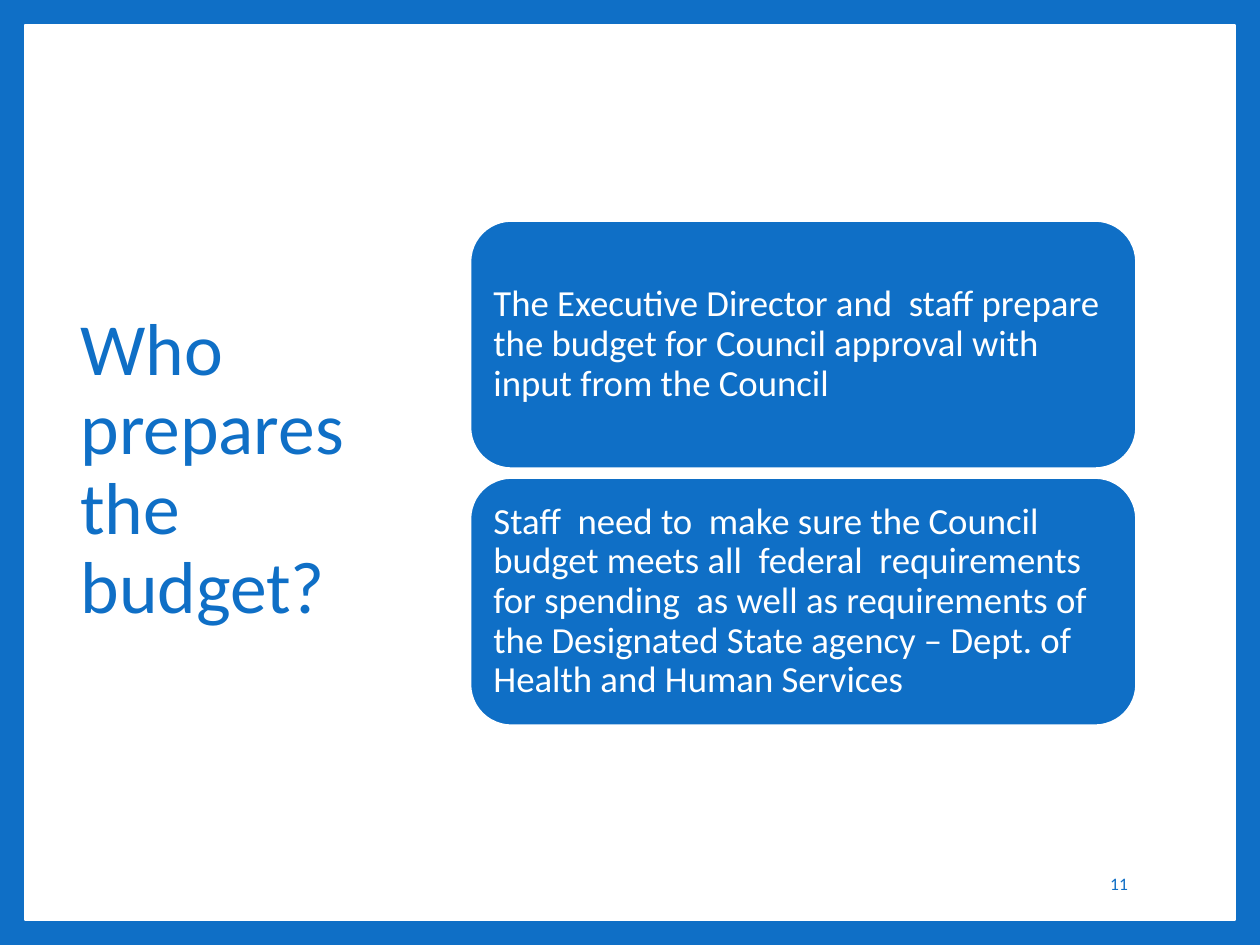
from pptx import Presentation
from pptx.dml.color import RGBColor
from pptx.enum.shapes import MSO_SHAPE as Shape
from pptx.enum.text import MSO_ANCHOR as Anchor, PP_ALIGN as Align
from pptx.util import Inches, Pt

COLORS = {"blue": "0F6FC6", "white": "FFFFFF"}
FONT = "Calibri"

CARD_LEFT, CARD_TOP = 3.73, 1.75
CARD_WIDTH, CARD_HEIGHT = 5.29, 1.97
CARD_PITCH = 2.04
CARD_INSET = 0.09

ANSWERS = [
    "The Executive Director and  staff prepare the budget for Council approval "
    "with input from the Council",
    "Staff  need to  make sure the Council budget meets all  federal  requirements "
    "for spending  as well as requirements of the Designated State agency – "
    "Dept. of Health and Human Services",
]


def color(name):
    return RGBColor.from_string(COLORS[name])


def write(shape, text, size, color_name, align=Align.LEFT, line_spacing=None):
    """Fill a shape with one vertically centred paragraph."""
    frame = shape.text_frame
    frame.word_wrap = True
    frame.vertical_anchor = Anchor.MIDDLE
    paragraph = frame.paragraphs[0]
    paragraph.text = text
    paragraph.alignment = align
    paragraph.line_spacing = line_spacing
    paragraph.font.name = FONT
    paragraph.font.size = Pt(size)
    paragraph.font.color.rgb = color(color_name)


def add_label(slide, box, text, size, **style):
    label = slide.shapes.add_textbox(*map(Inches, box))
    write(label, text, size, "blue", **style)


def add_panel(slide, preset, box, fill, line_width):
    panel = slide.shapes.add_shape(preset, *map(Inches, box))
    panel.shadow.inherit = False
    panel.fill.solid()
    panel.fill.fore_color.rgb = color(fill)
    panel.line.color.rgb = color("white")
    panel.line.width = Pt(line_width)
    return panel


def add_answer_card(slide, index, answer):
    top = CARD_TOP + index * CARD_PITCH
    card = add_panel(slide, Shape.ROUNDED_RECTANGLE,
                     (CARD_LEFT, top, CARD_WIDTH, CARD_HEIGHT), "blue", 1.5)
    write(card, answer, 21, "white", line_spacing=0.9)
    frame = card.text_frame
    frame.margin_left = frame.margin_right = Inches(CARD_INSET)
    frame.margin_top = frame.margin_bottom = Inches(CARD_INSET)


def main():
    deck = Presentation()
    deck.slide_width, deck.slide_height = Inches(10), Inches(7.5)
    slide = deck.slides.add_slide(deck.slide_layouts[6])
    slide.background.fill.solid()
    slide.background.fill.fore_color.rgb = color("blue")

    add_panel(slide, Shape.RECTANGLE, (0.2, 0.2, 9.6, 7.1), "white", 1)
    add_label(slide, (0.54, 0.67, 2.76, 6.13), "Who prepares the budget?", 42,
              line_spacing=0.9)
    add_label(slide, (7.65, 6.81, 1.4, 0.4), "11", 10, align=Align.RIGHT)
    for index, answer in enumerate(ANSWERS):
        add_answer_card(slide, index, answer)

    deck.save("out.pptx")


if __name__ == "__main__":
    main()
